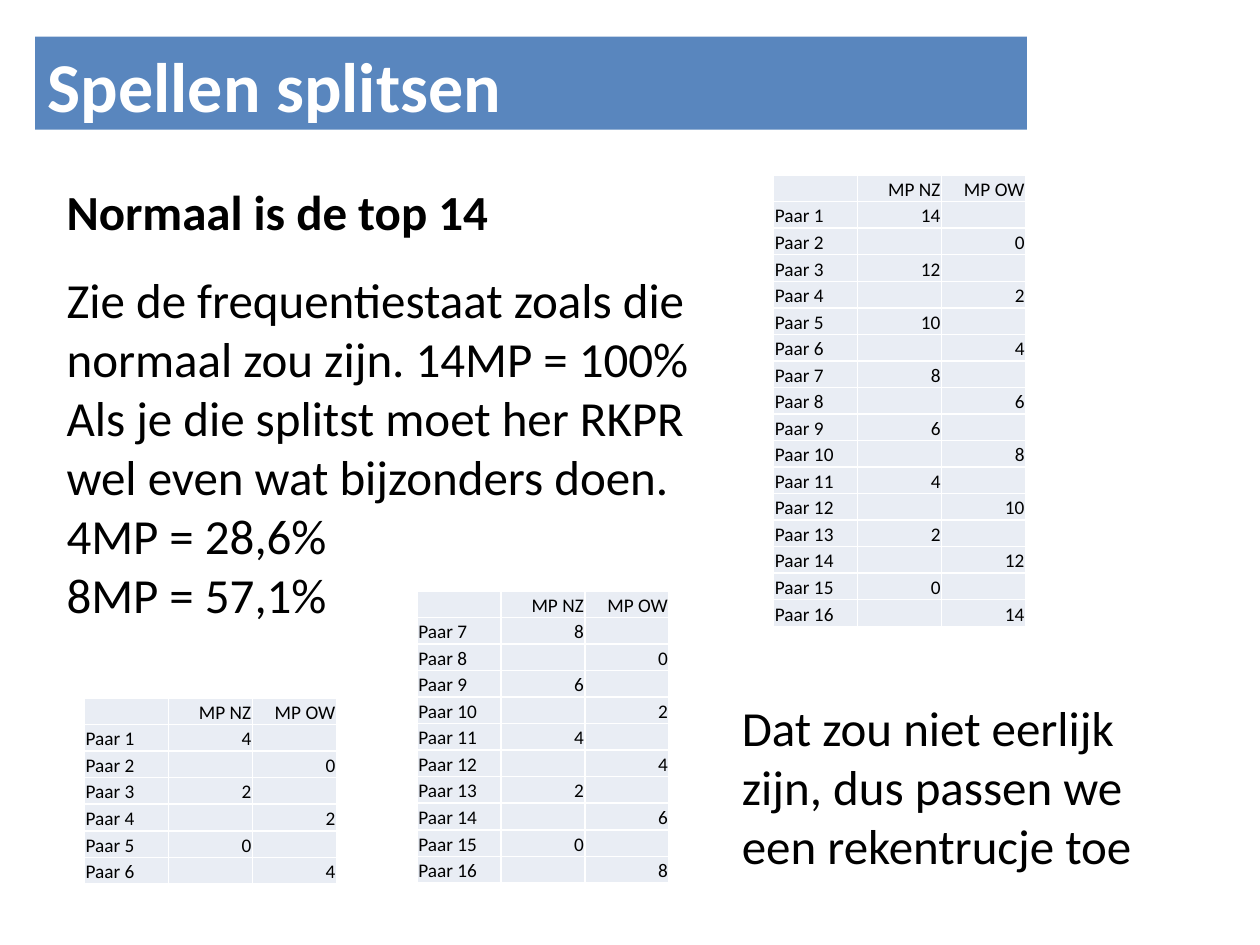
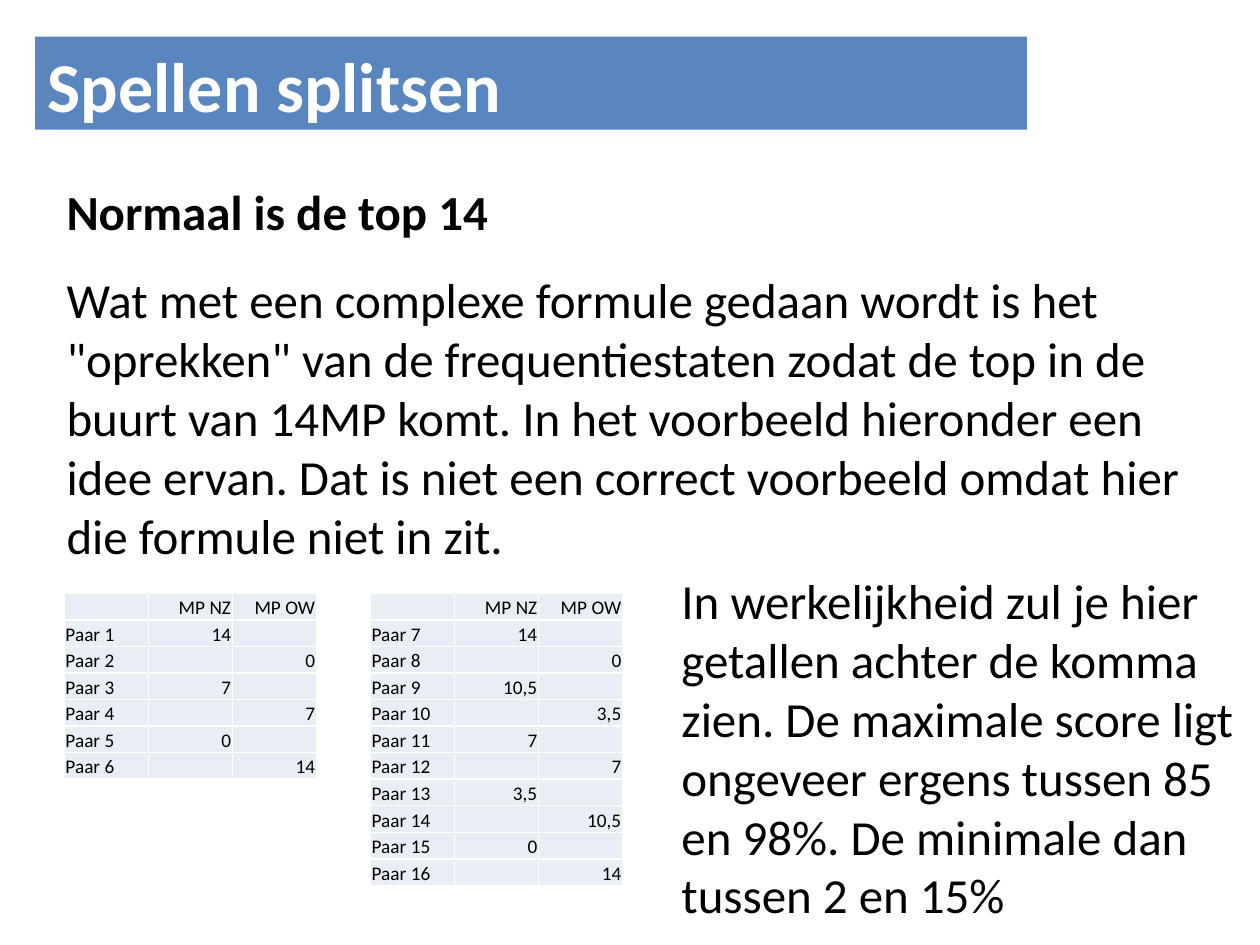
from lxml.etree import SubElement
from pptx import Presentation
from pptx.dml.color import RGBColor
from pptx.enum.shapes import MSO_SHAPE
from pptx.enum.text import MSO_ANCHOR, MSO_AUTO_SIZE, PP_ALIGN
from pptx.oxml.ns import qn
from pptx.util import Inches, Pt

FONT = "Calibri"
BAND, CELL, WHITE, BLACK = "5986BE", "E9EDF4", "FFFFFF", "000000"
WIDTH, HEIGHT = Inches(10), Inches(7.5)

# Boxes and sizes are percentages of the slide's width and height
BAND_BOX = (2.8, 3.87, 78.7, 9.87)
TITLE_BOX = (2.8, 3.87, 91.3, 10.27)
COL_W, ROW_H = 6.67, 2.81


def color(hex_text):
    return RGBColor.from_string(hex_text)


def across(share):
    return round(WIDTH * share / 100)


def down(share):
    return round(HEIGHT * share / 100)


def place(box):
    left, top, width, height = box
    return across(left), down(top), across(width), down(height)


def style(p, size, hex_text=BLACK, bold=False):
    p.font.name = FONT
    p.font.size = Pt(size)
    p.font.bold = bold
    p.font.color.rgb = color(hex_text)


def fit(tf):
    tf.word_wrap = True
    tf.auto_size = MSO_AUTO_SIZE.SHAPE_TO_FIT_TEXT
    tf.vertical_anchor = MSO_ANCHOR.TOP


def add_titled_slide(prs, title):
    slide = prs.slides.add_slide(prs.slide_layouts[5])
    # Band behind the title
    band = slide.shapes.add_shape(MSO_SHAPE.RECTANGLE, *place(BAND_BOX))
    band.shadow.inherit = False
    band.fill.solid()
    band.fill.fore_color.rgb = color(BAND)
    band.line.fill.background()
    # Title
    sp = slide.shapes.title
    sp.left, sp.top, sp.width, sp.height = place(TITLE_BOX)
    sp._element.addprevious(band._element)
    tf = sp.text_frame
    tf.text = title
    fit(tf)
    p = tf.paragraphs[0]
    p.alignment = PP_ALIGN.LEFT
    style(p, 40, WHITE, bold=True)
    return slide


def add_text(slide, box, paragraphs, heading=None):
    tf = slide.shapes.add_textbox(*place(box)).text_frame
    fit(tf)
    lines = [heading, *paragraphs] if heading else paragraphs
    tf.text = "\n".join(lines)
    for i, p in enumerate(tf.paragraphs):
        style(p, 28, bold=bool(heading) and i == 0)
    if heading:
        tf.paragraphs[1].space_before = Pt(17)


def score_rows(first_pair, pairs, top):
    """Odd places score NZ from the top down, even places OW from zero up."""
    step = top / (pairs // 2 - 1)
    rows = [("", "MP NZ", "MP OW")]
    for i in range(pairs):
        low = step * (i // 2)
        score = f"{low if i % 2 else top - low:g}".replace(".", ",")
        name = f"Paar {first_pair + i}"
        rows.append((name, "", score) if i % 2 else (name, score, ""))
    return rows


def add_scores(slide, left, top, rows):
    box = (left, top, 3 * COL_W, len(rows) * ROW_H)
    table = slide.shapes.add_table(len(rows), 3, *place(box)).table
    table.first_row = table.horz_banding = False
    for col in table.columns:
        col.width = across(COL_W)
    for r, values in enumerate(rows):
        table.rows[r].height = down(ROW_H)
        for c, value in enumerate(values):
            cell = table.cell(r, c)
            cell.margin_left = cell.margin_right = cell.margin_top = Inches(0.01)
            cell.margin_bottom = 0
            cell.vertical_anchor = MSO_ANCHOR.BOTTOM
            cell.fill.solid()
            cell.fill.fore_color.rgb = color(CELL)
            cell.text = value
            p = cell.text_frame.paragraphs[0]
            p.alignment = PP_ALIGN.RIGHT if c else PP_ALIGN.LEFT
            style(p, 11)
            if not value:  # keeps empty cells from stretching the row
                SubElement(p._p, qn("a:endParaRPr"), sz="1100")


def build_split_slide(prs, title, heading):
    slide = add_titled_slide(prs, title)
    add_text(slide, (4.3, 18.53, 55.9, 48.53), [
        "Zie de frequentiestaat zoals die normaal zou zijn. 14MP = 100%",
        "Als je die splitst moet her RKPR wel even wat bijzonders doen. "
        "4MP = 28,6%",
        "8MP = 57,1%",
    ], heading)
    # Full field, then the two parts
    add_scores(slide, 61.4, 18.53, score_rows(1, 16, 14))
    add_scores(slide, 6.7, 73.87, score_rows(1, 6, 4))
    add_scores(slide, 33.1, 62.53, score_rows(7, 10, 8))
    add_text(slide, (57.9, 73.2, 38.4, 20.13), [
        "Dat zou niet eerlijk zijn, dus passen we een rekentrucje toe"])


def build_stretch_slide(prs, title, heading):
    slide = add_titled_slide(prs, title)
    add_text(slide, (4.3, 18.53, 91.3, 42.13), [
        'Wat met een complexe formule gedaan wordt is het "oprekken" van de '
        "frequentiestaten zodat de top in de buurt van 14MP komt. In het "
        "voorbeeld hieronder een idee ervan. Dat is niet een correct "
        "voorbeeld omdat hier die formule niet in zit."], heading)
    # Both parts stretched to the full top
    add_scores(slide, 5.1, 62.8, score_rows(1, 6, 14))
    add_scores(slide, 29.4, 62.8, score_rows(7, 10, 14))
    add_text(slide, (53.1, 59.73, 46.9, 39.07), [
        "In werkelijkheid zul je hier getallen achter de komma zien. De "
        "maximale score ligt ongeveer ergens tussen 85 en 98%. De minimale "
        "dan tussen 2 en 15%"])


def main():
    prs = Presentation()
    prs.slide_width, prs.slide_height = WIDTH, HEIGHT
    for build in (build_split_slide, build_stretch_slide):
        build(prs, "Spellen splitsen", "Normaal is de top 14")
    prs.save("out.pptx")


if __name__ == "__main__":
    main()
